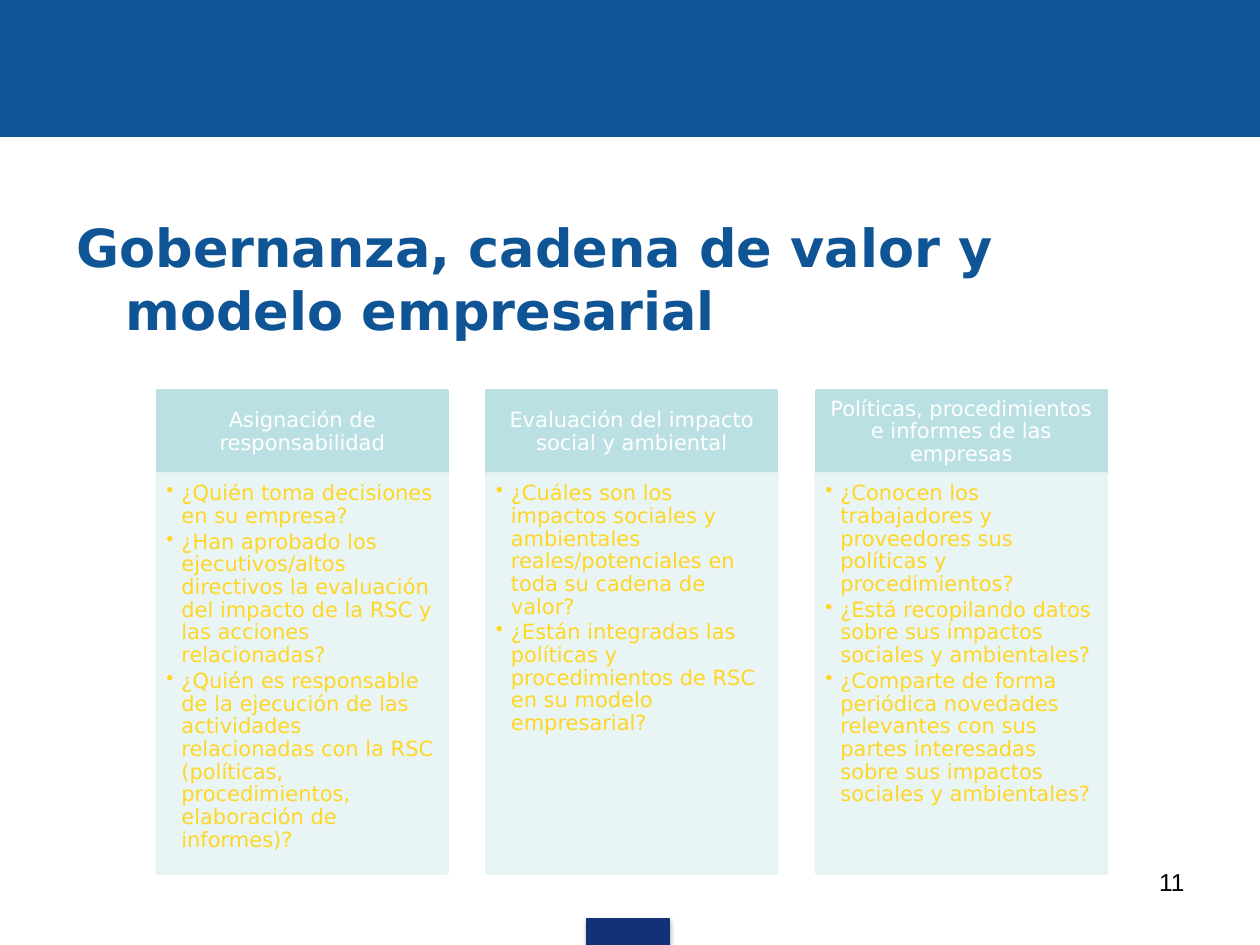
"""Build the slide on governance, value chain and business model."""
from dataclasses import dataclass

from lxml import etree
from pptx import Presentation
from pptx import util as u
from pptx.dml.color import RGBColor
from pptx.enum import shapes, text
from pptx.oxml import ns

BLUE, NAVY, TEAL, PALE = "0F5494", "133176", "BBE0E3", "E7F3F4"
WHITE, YELLOW, BLACK = "FFFFFF", "FFD624", "000000"
LEFT, STEP, WIDTH = 1.25, 2.615, 2.3
HEAD_TOP, HEAD_HEIGHT, BODY_HEIGHT = 3.1, 0.66, 3.17


@dataclass
class Column:
    heading: str
    questions: list[str]


COLUMNS = [
    Column("Asignación de responsabilidad", [
        "¿Quién toma decisiones en su empresa?",
        "¿Han aprobado los ejecutivos/altos directivos la evaluación del impacto "
        "de la RSC y las acciones relacionadas?",
        "¿Quién es responsable de la ejecución de las actividades relacionadas "
        "con la RSC (políticas, procedimientos, elaboración de informes)?",
    ]),
    Column("Evaluación del impacto social y ambiental", [
        "¿Cuáles son los impactos sociales y ambientales reales/potenciales en "
        "toda su cadena de valor?",
        "¿Están integradas las políticas y procedimientos de RSC en su modelo "
        "empresarial?",
    ]),
    Column("Políticas, procedimientos e informes de las empresas", [
        "¿Conocen los trabajadores y proveedores sus políticas y procedimientos?",
        "¿Está recopilando datos sobre sus impactos sociales y ambientales?",
        "¿Comparte de forma periódica novedades relevantes con sus partes "
        "interesadas sobre sus impactos sociales y ambientales?",
    ]),
]


def rgb(color: str) -> RGBColor:
    return RGBColor.from_string(color)


def add_xml(parent, tag: str, **attrs):
    return etree.SubElement(parent, ns.qn(tag), attrs)


def add_rect(s, x: float, y: float, w: float, h: float, color: str,
             line_width: float = 0.75, alpha: int = 100):
    sp = s.shapes.add_shape(shapes.MSO_SHAPE.RECTANGLE, u.Inches(x), u.Inches(y),
                            u.Inches(w), u.Inches(h))
    sp.shadow.inherit = False
    sp.fill.solid()
    sp.fill.fore_color.rgb = rgb(color)
    sp.line.color.rgb = rgb(color)
    sp.line.width = u.Pt(line_width)
    if alpha < 100:
        for clr in sp._element.spPr.iter(ns.qn("a:srgbClr")):
            add_xml(clr, "a:alpha", val=str(alpha * 1000))
    return sp


def add_shadow(sp) -> None:
    effects = sp._element.spPr.find(ns.qn("a:effectLst"))
    shadow = add_xml(effects, "a:outerShdw", blurRad=str(u.Pt(3.1)),
                     dist=str(u.Pt(1.8)), dir="5400000", rotWithShape="0")
    clr = add_xml(shadow, "a:srgbClr", val=BLACK)
    add_xml(clr, "a:alpha", val="35000")


def add_text_box(s, x: float, y: float, w: float, h: float):
    return s.shapes.add_textbox(u.Inches(x), u.Inches(y), u.Inches(w), u.Inches(h))


def write(sp, paragraphs: list[str], *, size: float = 12, color: str = BLACK,
          font: str = "DejaVu Sans", bold: bool = False,
          align=text.PP_ALIGN.LEFT, anchor=text.MSO_ANCHOR.TOP,
          insets=(0.1, 0.05, 0.1, 0.05), hanging: float = 0,
          bullet: str = "", spacing: float = 1, after: float = 0) -> None:
    tf = sp.text_frame
    tf.word_wrap = True
    tf.vertical_anchor = anchor
    (tf.margin_left, tf.margin_top,
     tf.margin_right, tf.margin_bottom) = map(u.Inches, insets)
    for i, content in enumerate(paragraphs):
        p = tf.add_paragraph() if i else tf.paragraphs[0]
        pPr = p._p.get_or_add_pPr()
        if hanging:
            pPr.set("marL", str(u.Inches(hanging)))
            pPr.set("indent", str(-u.Inches(hanging)))
        if bullet:
            add_xml(pPr, "a:buChar", char=bullet)
        p.alignment = align
        p.line_spacing = spacing
        p.space_after = u.Pt(after)
        r = p.add_run()
        r.text = content
        r.font.name = font
        r.font.size = u.Pt(size)
        r.font.bold = bold
        r.font.color.rgb = rgb(color)


def add_column(s, column: Column, x: float) -> None:
    head = add_rect(s, x, HEAD_TOP, WIDTH, HEAD_HEIGHT, TEAL, 2)
    write(head, [column.heading], color=WHITE, align=text.PP_ALIGN.CENTER,
          anchor=text.MSO_ANCHOR.MIDDLE, insets=(0.09, 0.05, 0.09, 0.05), spacing=0.9)
    body = add_rect(s, x, HEAD_TOP + HEAD_HEIGHT, WIDTH, BODY_HEIGHT, PALE, 2, alpha=90)
    write(body, column.questions, color=YELLOW, insets=(0.07, 0.07, 0.09, 0.1),
          hanging=0.12, bullet="•", spacing=0.9, after=1.8)


def main() -> None:
    prs = Presentation()
    prs.slide_width, prs.slide_height = u.Inches(10), u.Inches(7.5)
    s = prs.slides.add_slide(prs.slide_layouts[6])
    add_rect(s, 0, 0, 10, 1.08, BLUE)
    add_shadow(add_rect(s, 4.66, 7.29, 0.65, 0.22, NAVY))
    write(add_text_box(s, 0.51, 1.7, 9, 1.02),
          ["Gobernanza, cadena de valor y modelo empresarial"],
          size=30, color=BLUE, bold=True, anchor=text.MSO_ANCHOR.MIDDLE, hanging=0.39)
    for i, column in enumerate(COLUMNS):
        add_column(s, column, LEFT + i * STEP)
    write(add_text_box(s, 7.17, 6.83, 2.33, 0.52), ["11"], size=14, font="Arial",
          align=text.PP_ALIGN.RIGHT)
    prs.save("out.pptx")


if __name__ == "__main__":
    main()
